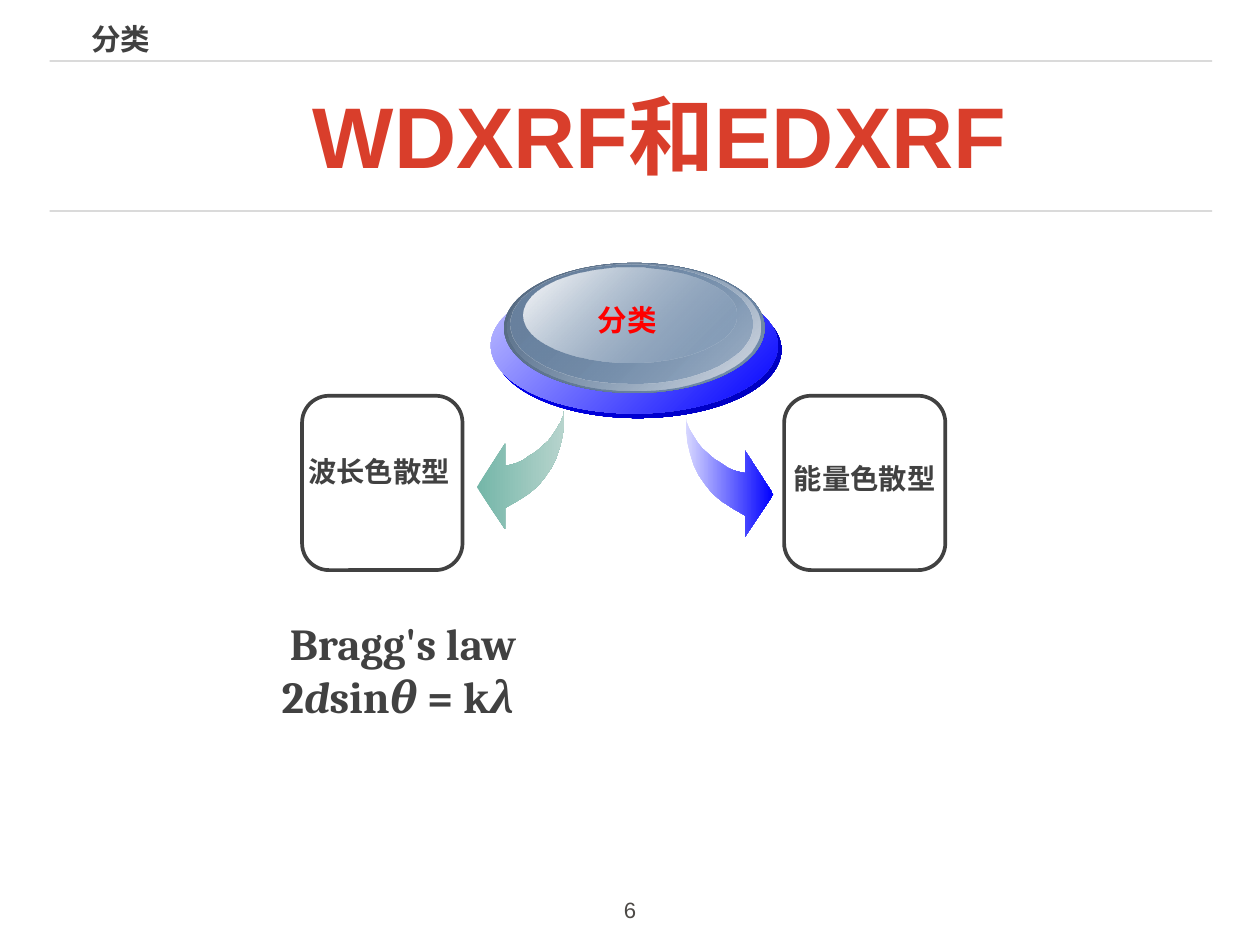
import dataclasses
import typing

import pptx
import pptx.dml.color
import pptx.enum.shapes
import pptx.enum.text
import pptx.oxml.ns
import pptx.oxml.xmlchemy
import pptx.util

Cm = pptx.util.Cm
Pt = pptx.util.Pt
Shape = pptx.enum.shapes.MSO_SHAPE
Anchor = pptx.enum.text.MSO_ANCHOR
AutoSize = pptx.enum.text.MSO_AUTO_SIZE

DARK = "414141"
RULE_LEFT, RULE_RIGHT = 1.42, 34.75
TIGHT = 0.15

# Curved arrow outline in cm, measured outwards and downwards from its tail tip.
ARROW_OUTLINE = [
    (0, 0), (0, 0.41), (0.05, 0.76), (0.13, 1.09), (0.23, 1.4), (0.38, 1.7),
    (0.56, 1.96), (0.76, 2.21), (1.04, 2.44), (1.35, 2.64), (1.7, 2.84),
    (1.7, 3.45), (2.51, 2.24), (1.7, 0.99), (1.7, 1.63), (1.55, 1.6),
    (1.37, 1.55), (1.19, 1.47), (1.02, 1.35), (0.81, 1.22), (0.64, 1.07),
    (0.46, 0.91), (0.33, 0.74), (0.2, 0.53), (0.1, 0.36), (0.03, 0.18),
]


class Place(typing.NamedTuple):
    left: float
    top: float
    width: float
    height: float

    def lengths(self) -> list:
        return [Cm(value) for value in self]


class Span(typing.NamedTuple):
    text: str
    italic: bool = False


class Stop(typing.NamedTuple):
    color: str
    opacity: int = 100


@dataclasses.dataclass
class Label:
    place: Place
    lines: list[list[Span]]
    size: float
    font: str = "Arial"
    color: str = DARK
    bold: bool = True
    wrap: bool = True
    anchor: Anchor = Anchor.TOP
    inset: float | None = None
    auto_size: AutoSize = AutoSize.SHAPE_TO_FIT_TEXT


@dataclasses.dataclass
class Disc:
    place: Place
    start: Stop
    end: Stop


@dataclasses.dataclass
class Arrow:
    tip: tuple[float, float]
    direction: int
    start: Stop
    end: Stop


TITLE = Label(Place(2.26, 2.34, 33.3, 3.38), [[Span("WDXRF和EDXRF")]], 70,
              color="D93E2B", anchor=Anchor.MIDDLE, inset=TIGHT,
              auto_size=AutoSize.NONE)

LABELS = [
    Label(Place(17.58, 25.55, 0.97, 1.12), [[Span("6")]], 18, color="4C4946",
          bold=False, wrap=False, inset=TIGHT),
    Label(Place(15.27, 8.53, 5.41, 1.27), [[Span("分类")]], 24, "Cambria", "FF0000"),
    Label(Place(22.48, 13.08, 4.8, 1.24), [[Span("能量色散型 ")]], 23,
          anchor=Anchor.MIDDLE),
    Label(Place(8.48, 12.9, 4.78, 1.27), [[Span("波长色散型")]], 23, wrap=False),
    Label(Place(6.45, 17.55, 10.21, 3.33),
          [[Span("Bragg's law")],
           [Span("2"), Span("d", True), Span("sin"), Span("θ ", True),
            Span("= k"), Span("λ ", True)]], 36, "Cambria"),
    Label(Place(2.46, 0.46, 2.01, 1.32), [[Span("分类")]], 24, "Cambria",
          wrap=False, anchor=Anchor.MIDDLE, inset=TIGHT),
]

DISCS = [
    Disc(Place(14.17, 8.08, 8.23, 3.91), Stop("0000FF"), Stop("0000BA")),
    Disc(Place(14.07, 7.95, 8.23, 3.91), Stop("C6C6FF"), Stop("0000FF")),
    Disc(Place(14.45, 7.54, 7.47, 3.73), Stop("52667D"), Stop("738FAF")),
    Disc(Place(14.55, 7.57, 7.26, 3.63), Stop("738FAF", 0), Stop("DBE0E7")),
    Disc(Place(14.63, 7.59, 6.93, 3.4), Stop("68819E"), Stop("738FAF", 48)),
    Disc(Place(15.01, 7.67, 6.1, 2.74), Stop("FFFFFF"), Stop("738FAF", 38)),
]

ARROWS = [
    Arrow((16.18, 11.73), -1, Stop("74B6A8"), Stop("B7D4CD")),
    Arrow((19.66, 11.94), 1, Stop("D8D8FF"), Stop("0000FF")),
]

FRAMES = [Place(22.48, 11.35, 4.62, 5), Place(8.66, 11.35, 4.6, 5)]


def rgb(color: str) -> pptx.dml.color.RGBColor:
    return pptx.dml.color.RGBColor.from_string(color)


def apply(target, values: dict) -> None:
    for name, value in values.items():
        setattr(target, name, value)


def set_opacities(shape, percents: list[int]) -> None:
    """Set the opacity of each RGB colour of the shape, in document order."""
    colors = shape._element.spPr.iter(pptx.oxml.ns.qn("a:srgbClr"))
    for color, percent in zip(list(colors), percents):
        if percent < 100:
            alpha = pptx.oxml.xmlchemy.OxmlElement("a:alpha")
            alpha.set("val", str(percent * 1000))
            color.append(alpha)


def paint_gradient(shape, start: Stop, end: Stop, angle: int) -> None:
    """Fill with a two-colour gradient; the angle runs counter-clockwise."""
    shape.shadow.inherit = False
    shape.line.fill.background()
    shape.fill.gradient()
    shape.fill.gradient_angle = angle
    for gradient_stop, stop in zip(shape.fill.gradient_stops, (start, end)):
        gradient_stop.color.rgb = rgb(stop.color)
    set_opacities(shape, [start.opacity, end.opacity])


def write_label(box, label: Label) -> None:
    frame = box.text_frame
    apply(frame, {"word_wrap": label.wrap, "vertical_anchor": label.anchor,
                  "auto_size": label.auto_size})
    if label.inset is not None:
        for side in ("left", "top", "right", "bottom"):
            setattr(frame, f"margin_{side}", Cm(label.inset))
    for index, line in enumerate(label.lines):
        para = frame.add_paragraph() if index else frame.paragraphs[0]
        para.alignment = pptx.enum.text.PP_ALIGN.CENTER
        for span in line:
            run = para.add_run()
            run.text = span.text
            apply(run.font, {"name": label.font, "size": Pt(label.size),
                             "bold": label.bold, "italic": span.italic})
            run.font.color.rgb = rgb(label.color)


def add_title(page) -> None:
    title = page.shapes.title
    apply(title, dict(zip(("left", "top", "width", "height"), TITLE.place.lengths())))
    write_label(title, TITLE)
    apply(title.text_frame.paragraphs[0], {"line_spacing": 0.9, "space_before": Pt(16)})


def add_rule(page, top: float) -> None:
    rule = page.shapes.add_connector(pptx.enum.shapes.MSO_CONNECTOR.STRAIGHT,
                                     Cm(RULE_LEFT), Cm(top), Cm(RULE_RIGHT), Cm(top))
    rule.line.width = Pt(1)
    rule.line.color.rgb = rgb("444444")
    set_opacities(rule, [30])
    rule._element.spPr.append(pptx.oxml.xmlchemy.OxmlElement("a:effectLst"))


def add_frame(page, place: Place) -> None:
    frame = page.shapes.add_shape(Shape.ROUNDED_RECTANGLE, *place.lengths())
    frame.shadow.inherit = False
    frame.adjustments[0] = 0.167
    frame.fill.background()
    frame.line.width = Pt(3)
    frame.line.color.rgb = rgb(DARK)


def add_arrow(page, arrow: Arrow) -> None:
    left, top = arrow.tip
    points = [(Cm(left + arrow.direction * out), Cm(top + down))
              for out, down in ARROW_OUTLINE]
    builder = page.shapes.build_freeform(*points[0])
    builder.add_line_segments(points[1:], close=True)
    paint_gradient(builder.convert_to_shape(), arrow.start, arrow.end, 0)


def main() -> None:
    deck = pptx.Presentation()
    apply(deck, {"slide_width": Cm(36.12), "slide_height": Cm(27.1)})
    page = deck.slides.add_slide(deck.slide_layouts[5])
    add_title(page)
    for top in (1.75, 6.05):
        add_rule(page, top)
    for place in FRAMES:
        add_frame(page, place)
    for arrow in ARROWS:
        add_arrow(page, arrow)
    button = page.shapes.add_group_shape()
    for disc in DISCS:
        oval = button.shapes.add_shape(Shape.OVAL, *disc.place.lengths())
        paint_gradient(oval, disc.start, disc.end, 315)
    for label in LABELS:
        write_label(page.shapes.add_textbox(*label.place.lengths()), label)
    deck.save("out.pptx")


if __name__ == "__main__":
    main()
